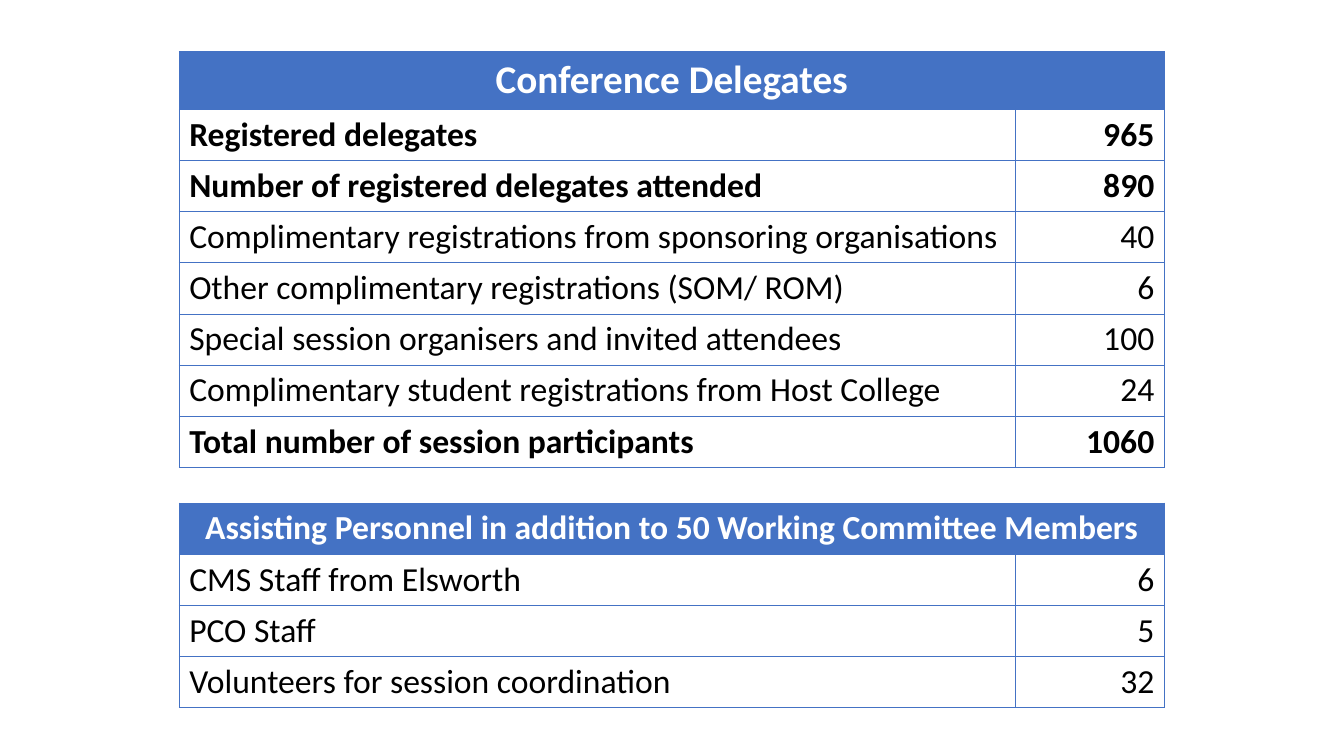
from lxml import etree
from pptx import Presentation
from pptx.dml.color import RGBColor
from pptx.enum.text import MSO_ANCHOR, PP_ALIGN
from pptx.oxml.ns import qn
from pptx.util import Inches, Pt

LEFT, MID, RIGHT = PP_ALIGN.LEFT, PP_ALIGN.CENTER, PP_ALIGN.RIGHT
CENTRE = MSO_ANCHOR.MIDDLE
WIDE, HIGH = 13.33, 7.5
COLS, ROWS = 36, 75
COLOURS = {"blue": "4472C4", "white": "FFFFFF", "black": "000000"}

DELEGATES = [
    ("Registered delegates", 965, True),
    ("Number of registered delegates attended", 890, True),
    ("Complimentary registrations from sponsoring organisations", 40, False),
    ("Other complimentary registrations (SOM/ ROM)", 6, False),
    ("Special session organisers and invited attendees", 100, False),
    ("Complimentary student registrations from Host College", 24, False),
    ("Total number of session participants", 1060, True),
]
STAFF = [
    ("CMS Staff from Elsworth", 6, False),
    ("PCO Staff", 5, False),
    ("Volunteers for session coordination", 32, False),
]


class Deck:
    font = "Calibri"
    size = 24
    line = 0.5
    left = 4.8
    spans = (22.39, 4)
    row = 5

    def __init__(self):
        self.prs = Presentation()
        self.prs.slide_width = Inches(WIDE)
        self.prs.slide_height = Inches(HIGH)
        self.slide = self.prs.slides.add_slide(self.prs.slide_layouts[6])

    def across(self, cols):
        return Inches(cols * WIDE / COLS)

    def down(self, rows):
        return Inches(rows * HIGH / ROWS)

    def colour(self, name):
        return RGBColor.from_string(COLOURS[name])

    def border(self, cell):
        props = cell._tc.get_or_add_tcPr()
        for side in ("lnL", "lnR", "lnT", "lnB"):
            edge = etree.SubElement(props, qn("a:" + side), w=str(Pt(self.line)))
            fill = etree.SubElement(edge, qn("a:solidFill"))
            etree.SubElement(fill, qn("a:srgbClr"), val=COLOURS["blue"])

    def cell(self, cell, text, align, bold, size, ink="black", back="white"):
        cell.fill.solid()
        cell.fill.fore_color.rgb = self.colour(back)
        cell.vertical_anchor = CENTRE
        cell.text = text
        para = cell.text_frame.paragraphs[0]
        para.alignment = align
        para.font.name = self.font
        para.font.size = Pt(size)
        para.font.bold = bold
        para.font.color.rgb = self.colour(ink)

    def table(self, top, title, size, head, data):
        """Draw a counts table whose title spans both columns."""
        count = len(data) + 1
        frame = self.slide.shapes.add_table(
            count, 2, self.across(self.left), self.down(top),
            self.across(sum(self.spans)), self.down(head + self.row * len(data)))
        grid = frame.table
        grid.first_row = grid.horz_banding = False
        for col, span in zip(grid.columns, self.spans):
            col.width = self.across(span)
        for row in grid.rows:
            row.height = self.down(self.row)
        grid.rows[0].height = self.down(head)
        for cell in grid.iter_cells():
            self.border(cell)

        grid.cell(0, 0).merge(grid.cell(0, 1))
        self.cell(grid.cell(0, 0), title, MID, True, size, "white", "blue")
        for i, (label, value, bold) in enumerate(data, 1):
            self.cell(grid.cell(i, 0), label, LEFT, bold, self.size)
            self.cell(grid.cell(i, 1), str(value), RIGHT, bold, self.size)


def main():
    deck = Deck()
    deck.table(5.1, "Conference Delegates", 28, 5.7, DELEGATES)
    deck.table(49.9, "Assisting Personnel in addition to 50 Working Committee Members",
               24, 5, STAFF)
    deck.prs.save("out.pptx")


if __name__ == "__main__":
    main()
